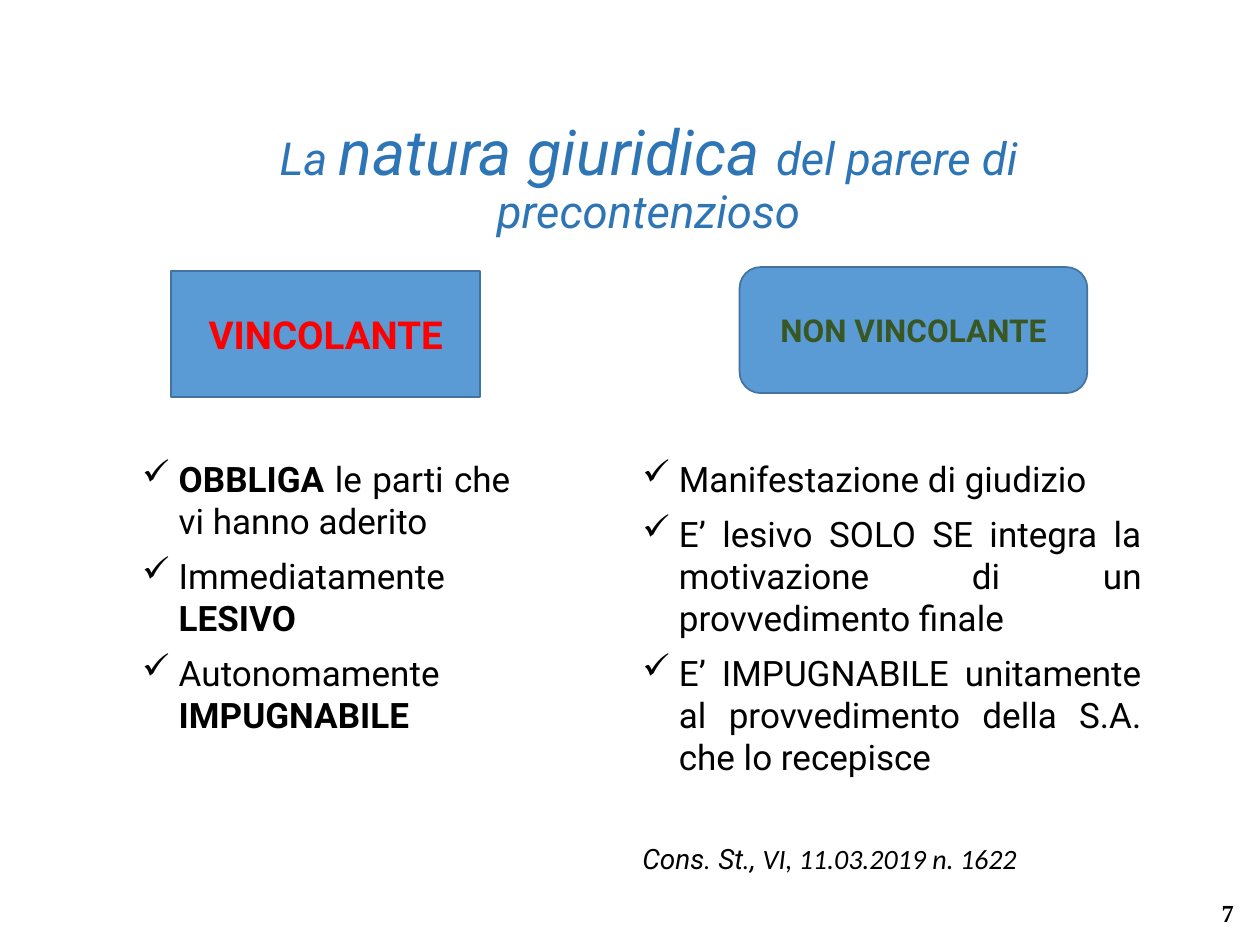
from dataclasses import dataclass
from lxml import etree
from pptx import Presentation
from pptx import util as u
from pptx.dml.color import RGBColor
from pptx.enum import shapes, text
from pptx.oxml.ns import qn

FONT = "Roboto"
BLACK, BLUE, EDGE = "000000", "5B9BD5", "43739E"
INDENT = u.Inches(0.29)


@dataclass
class Run:
    words: str
    bold: bool | None = None
    size: float | None = None
    face: str | None = None


@dataclass
class Para:
    runs: list[Run]
    size: float = 20
    color: str = BLACK
    face: str = FONT
    bold: bool = False
    italic: bool = False
    align: text.PP_ALIGN = text.PP_ALIGN.CENTER
    before: float = 0
    line: float = 1
    mark: str = ""


@dataclass
class Area:
    left: float
    top: float
    width: float
    height: float

    def dims(self) -> list[int]:
        return [u.Inches(v) for v in (self.left, self.top, self.width, self.height)]


@dataclass
class Label:
    kind: shapes.MSO_SHAPE
    area: Area
    words: str
    size: float
    color: str


def rgb(code: str) -> RGBColor:
    return RGBColor.from_string(code)


def write(frame, paras: list[Para], middle: bool = True) -> None:
    frame.word_wrap = True
    frame.vertical_anchor = text.MSO_ANCHOR.MIDDLE if middle else text.MSO_ANCHOR.TOP
    for i, item in enumerate(paras):
        para = frame.add_paragraph() if i else frame.paragraphs[0]
        para.alignment = item.align
        para.line_spacing = item.line
        para.space_before = u.Pt(item.before if i else 0)
        if item.mark:
            props = para._p.get_or_add_pPr()
            props.set("marL", str(INDENT))
            props.set("indent", str(-INDENT))
            etree.SubElement(props, qn("a:buChar")).set("char", item.mark)
        font = para.font
        font.name, font.size = item.face, u.Pt(item.size)
        font.bold, font.italic = item.bold, item.italic
        font.color.rgb = rgb(item.color)
        for part in item.runs:
            run = para.add_run()
            run.text = part.words
            if part.bold is not None:
                run.font.bold = part.bold
            if part.size:
                run.font.size = u.Pt(part.size)
            if part.face:
                run.font.name = part.face


def add_text(slide, area: Area, paras: list[Para], middle: bool = True) -> None:
    write(slide.shapes.add_textbox(*area.dims()).text_frame, paras, middle)


def add_label(slide, label: Label) -> None:
    shape = slide.shapes.add_shape(label.kind, *label.area.dims())
    shape.shadow.inherit = False
    shape.fill.solid()
    shape.fill.fore_color.rgb = rgb(BLUE)
    shape.line.color.rgb = rgb(EDGE)
    shape.line.width = u.Pt(1)
    write(shape.text_frame,
          [Para([Run(label.words)], label.size, label.color, bold=True)])


def bullet(*runs: Run) -> Para:
    return Para(list(runs), align=text.PP_ALIGN.JUSTIFY, before=7.5, mark="✓")


TITLE = Para([Run("La "), Run("natura giuridica ", size=36),
              Run("del parere di precontenzioso")],
             size=26, color="2E75B6", italic=True, line=0.9)

LABELS = [
    Label(shapes.MSO_SHAPE.RECTANGLE, Area(1.36, 2.15, 2.45, 1),
          "VINCOLANTE", 22, "FF0000"),
    Label(shapes.MSO_SHAPE.ROUNDED_RECTANGLE, Area(5.87, 2.12, 2.76, 1),
          "NON VINCOLANTE", 18, "385723"),
]

BINDING = [
    bullet(Run("OBBLIGA", True), Run(" le parti che vi hanno aderito")),
    bullet(Run("Immediatamente "), Run("LESIVO", True)),
    bullet(Run("Autonomamente "), Run("IMPUGNABILE", True)),
]

ADVISORY = [
    bullet(Run("Manifestazione di giudizio")),
    bullet(Run("E’ lesivo SOLO SE integra la motivazione di un provvedimento finale")),
    bullet(Run("E’ IMPUGNABILE unitamente al provvedimento della S.A. che lo recepisce")),
    Para([Run("Cons. St., "), Run("VI, 11.03.2019 n. 1622", face="Calibri")],
         size=16, italic=True, align=text.PP_ALIGN.LEFT, before=38.4, line=0.9),
]

NUMBER = Para([Run("7")], size=14, face="Times New Roman", bold=True,
              align=text.PP_ALIGN.RIGHT)


def main() -> None:
    deck = Presentation()
    deck.slide_width, deck.slide_height = u.Inches(10), u.Inches(7.5)
    slide = deck.slides.add_slide(deck.slide_layouts[6])

    # Title
    add_text(slide, Area(0.98, 1.09, 8.34, 0.67), [TITLE])

    # Column headings
    for label in LABELS:
        add_label(slide, label)

    # Columns
    add_text(slide, Area(1.03, 3.58, 3.12, 2.55), BINDING, middle=False)
    add_text(slide, Area(5, 3.58, 4.16, 3.64), ADVISORY, middle=False)

    # Slide number
    add_text(slide, Area(7.64, 7.04, 2.25, 0.4), [NUMBER])

    deck.save("out.pptx")


if __name__ == "__main__":
    main()
